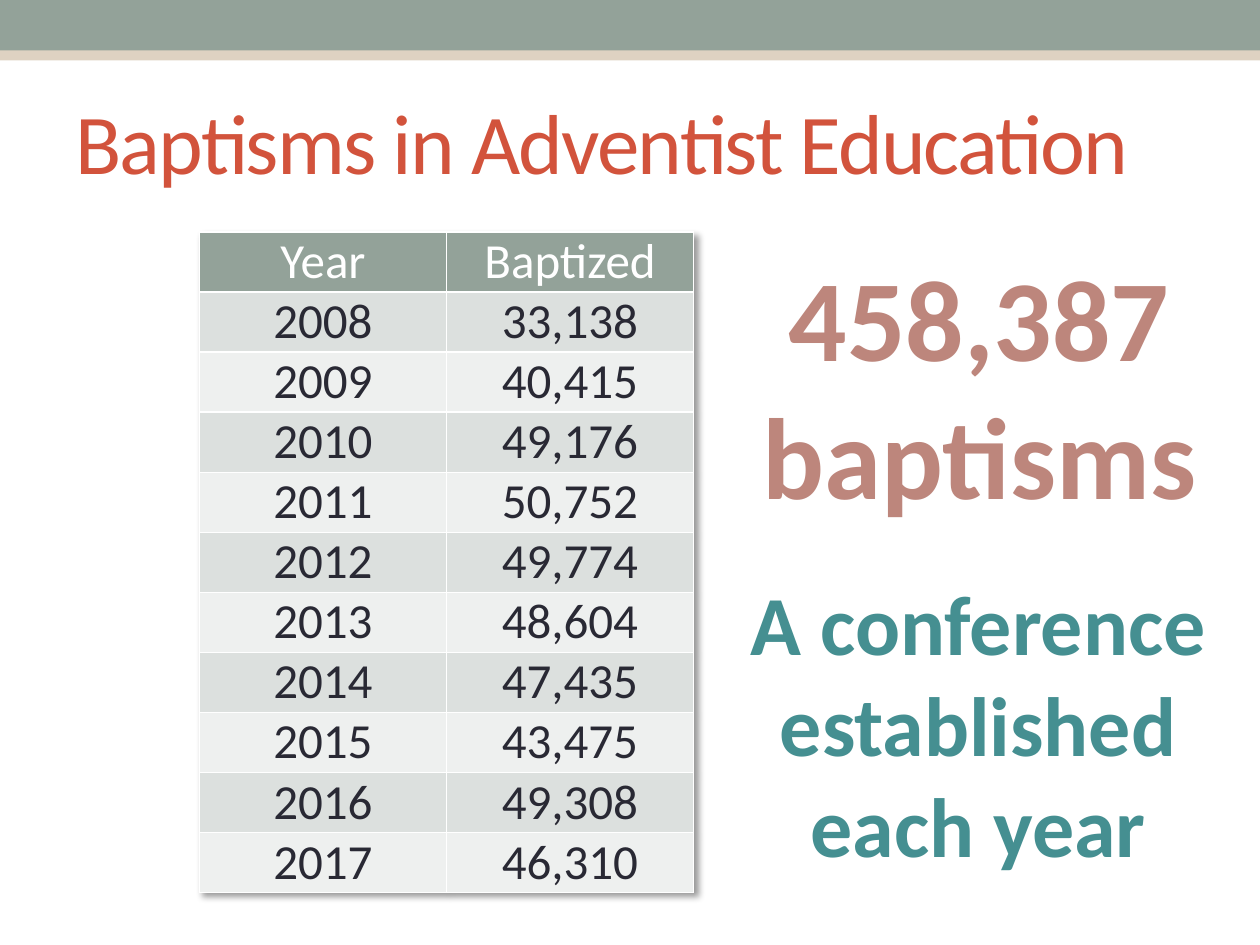
from lxml import etree
from pptx import Presentation
from pptx.dml.color import RGBColor
from pptx.enum.shapes import MSO_SHAPE
from pptx.enum.text import MSO_ANCHOR, PP_ALIGN
from pptx.util import Cm, Pt

RECT = MSO_SHAPE.RECTANGLE
MIDDLE = MSO_ANCHOR.MIDDLE
TOP = MSO_ANCHOR.TOP
LEFT = PP_ALIGN.LEFT
CENTER = PP_ALIGN.CENTER

SAGE = RGBColor(0x93, 0xA2, 0x99)
SAND = RGBColor(0xDE, 0xD2, 0xC2)
RED = RGBColor(0xD2, 0x53, 0x3C)
ROSE = RGBColor(0xBD, 0x86, 0x7C)
TEAL = RGBColor(0x45, 0x8F, 0x91)
INK = RGBColor(0x29, 0x29, 0x34)
WHITE = RGBColor(0xFF, 0xFF, 0xFF)
BANDS = (RGBColor(0xDC, 0xE0, 0xDE), RGBColor(0xEE, 0xF0, 0xEF))

FONT = "Calibri"
ROWS = [
    ("Year", "Baptized"),
    ("2008", "33,138"),
    ("2009", "40,415"),
    ("2010", "49,176"),
    ("2011", "50,752"),
    ("2012", "49,774"),
    ("2013", "48,604"),
    ("2014", "47,435"),
    ("2015", "43,475"),
    ("2016", "49,308"),
    ("2017", "46,310"),
]
SHADOW = (
    '<a:effectLst xmlns:a="http://schemas.openxmlformats.org/drawingml/2006/main">'
    '<a:outerShdw blurRad="50800" dist="38100" dir="2700000" algn="tl">'
    '<a:srgbClr val="000000"><a:alpha val="40000"/></a:srgbClr>'
    "</a:outerShdw></a:effectLst>"
)


def style(frame, size, color, bold=False, align=CENTER):
    for para in frame.paragraphs:
        para.alignment = align
        for run in para.runs:
            font = run.font
            font.name, font.size, font.bold = FONT, Pt(size), bold
            font.color.rgb = color


def add_band(slide, top, color):
    band = slide.shapes.add_shape(RECT, 0, Cm(top), Cm(25.4), Cm(1.02))
    band.shadow.inherit = False
    band.fill.solid()
    band.fill.fore_color.rgb = color
    band.line.fill.background()


def add_text(slide, box, text, wrap=False, anchor=TOP):
    frame = slide.shapes.add_textbox(*map(Cm, box)).text_frame
    frame.word_wrap = wrap
    frame.vertical_anchor = anchor
    frame.text = text
    return frame


def add_title(slide, text):
    frame = add_text(slide, (1.27, 1.47, 22.86, 2.74), text, True, MIDDLE)
    style(frame, 48.6, RED, align=LEFT)
    frame.paragraphs[0].runs[0].font._element.set("spc", "-100")


def add_grid(slide, rows):
    high = 1.21
    frame = slide.shapes.add_table(
        len(rows), 2, Cm(4.02), Cm(4.68), Cm(9.96), Cm(high * len(rows))
    )
    table = frame.table
    table._tbl.tblPr.insert(0, etree.fromstring(SHADOW))
    for i, row in enumerate(rows):
        table.rows[i].height = Cm(high)
        fill = BANDS[(i - 1) % 2] if i else SAGE
        for j, text in enumerate(row):
            cell = table.cell(i, j)
            cell.margin_top = cell.margin_bottom = 0
            cell.fill.solid()
            cell.fill.fore_color.rgb = fill
            cell.text_frame.text = text
            style(cell.text_frame, 28, INK if i else WHITE)


def main():
    deck = Presentation()
    deck.slide_width, deck.slide_height = Cm(25.4), Cm(19.05)
    slide = deck.slides.add_slide(deck.slide_layouts[6])
    add_band(slide, 0.2, SAND)
    add_band(slide, 0, SAGE)
    add_title(slide, "Baptisms in Adventist Education")
    add_grid(slide, ROWS)
    total = add_text(slide, (15.06, 4.83, 9.37, 5.89), "458,387\nbaptisms")
    style(total, 66, ROSE, True)
    note = add_text(
        slide, (14.83, 11.4, 9.78, 6.4), "A conference\vestablished\veach year"
    )
    style(note, 48, TEAL, True)
    deck.save("out.pptx")


if __name__ == "__main__":
    main()
